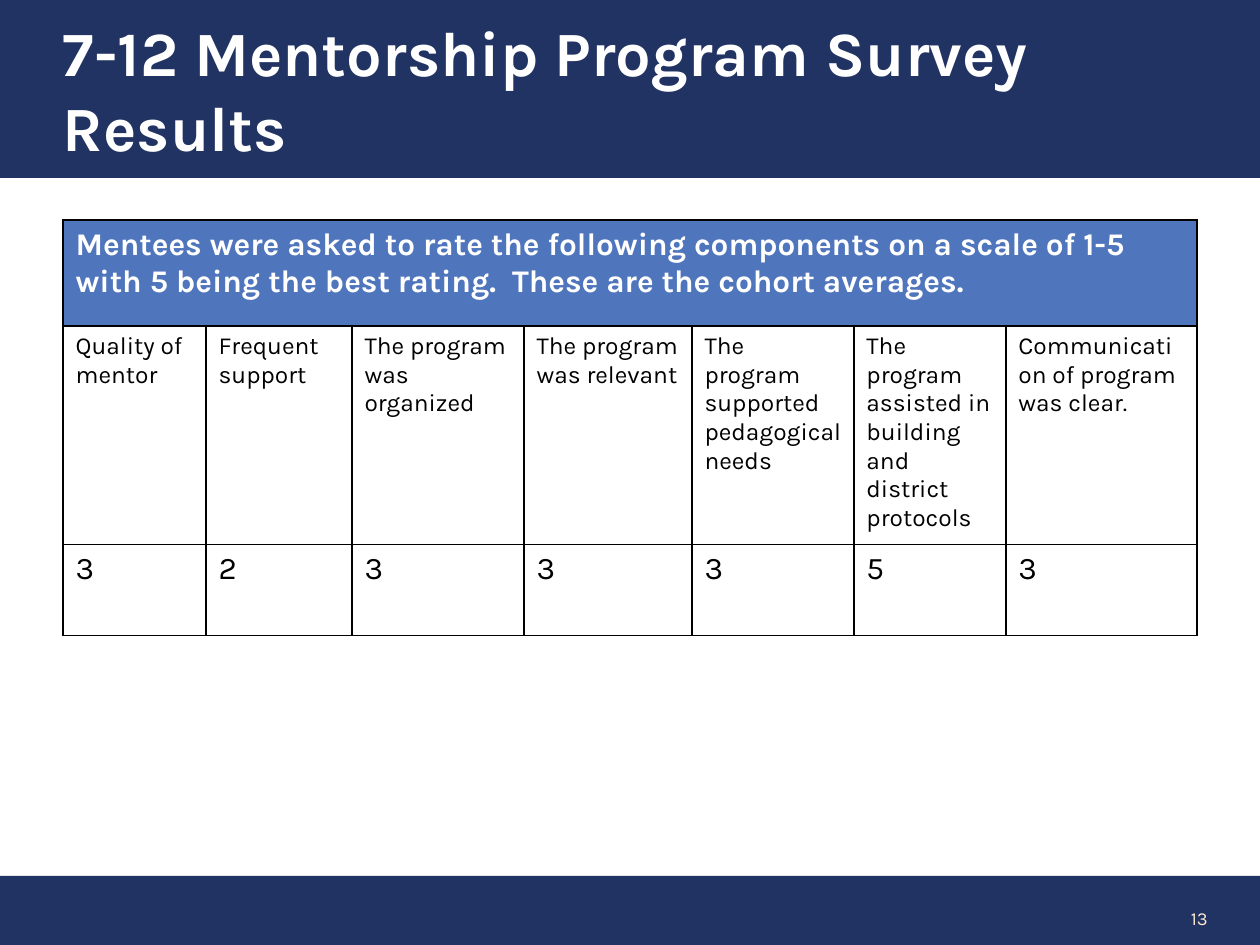
from dataclasses import dataclass

import pptx
import pptx.dml.color
import pptx.enum.shapes
import pptx.enum.text
import pptx.oxml
import pptx.oxml.ns
import pptx.util

EMU_PER_PX = 914400 / 126
ALIGN = pptx.enum.text.PP_ALIGN
ANCHOR = pptx.enum.text.MSO_ANCHOR


@dataclass(frozen=True)
class Theme:
    font: str = "Karla"
    navy: str = "213363"
    header_blue: str = "4F75BC"
    white: str = "FFFFFF"
    black: str = "000000"
    cream: str = "FEEBD0"
    title_size: float = 36
    large_size: float = 18
    label_size: float = 14
    number_size: float = 10.5
    border_width: float = 1


@dataclass(frozen=True)
class Box:
    left: int
    top: int
    width: int
    height: int

    def emu(self) -> list[int]:
        return [px(n) for n in (self.left, self.top, self.width, self.height)]


@dataclass(frozen=True)
class Rating:
    component: str
    average: str
    width: int


THEME = Theme()
SLIDE = Box(0, 0, 1260, 945)
TITLE_BAR = Box(0, 0, 1260, 178)
FOOTER_BAR = Box(0, 876, 1260, 69)
PAGE_NUMBER = Box(1036, 893, 184, 50)
TABLE = Box(63, 220, 1134, 375)
ROW_HEIGHTS = (106, 178, 91)
QUESTION = (
    "Mentees were asked to rate the following components on a scale of 1-5 "
    "with 5 being the best rating.  These are the cohort averages."
)
RATINGS = (
    Rating("Quality of mentor", "3", 143),
    Rating("Frequent support", "2", 146),
    Rating("The program was organized", "3", 172),
    Rating("The program was relevant", "3", 168),
    Rating("The program supported pedagogical needs", "3", 162),
    Rating("The program assisted in building and district protocols", "5", 152),
    Rating("Communication of program was clear.", "3", 191),
)


def px(length: int) -> int:
    return round(length * EMU_PER_PX)


def rgb(value: str) -> pptx.dml.color.RGBColor:
    return pptx.dml.color.RGBColor.from_string(value)


def write(frame, text: str, *, size: float, color: str, bold: bool = False,
          align=ALIGN.LEFT) -> None:
    frame.word_wrap = True
    paragraph = frame.paragraphs[0]
    paragraph.alignment = align
    run = paragraph.add_run()
    run.text = text
    run.font.name = THEME.font
    run.font.size = pptx.util.Pt(size)
    run.font.bold = bold
    run.font.color.rgb = rgb(color)


def add_bar(slide, box: Box):
    bar = slide.shapes.add_shape(
        pptx.enum.shapes.MSO_SHAPE.RECTANGLE, *box.emu())
    bar.shadow.inherit = False
    bar.fill.solid()
    bar.fill.fore_color.rgb = rgb(THEME.navy)
    bar.line.fill.background()
    return bar


def add_borders(cell) -> None:
    """Outline all four sides; the lines must precede the fill in the XML."""
    properties = cell._tc.get_or_add_tcPr()
    for position, side in enumerate("LRTB"):
        line = pptx.oxml.parse_xml(
            f'<a:ln{side} {pptx.oxml.ns.nsdecls("a")} '
            f'w="{pptx.util.Pt(THEME.border_width)}"><a:solidFill>'
            f'<a:srgbClr val="{THEME.black}"/></a:solidFill></a:ln{side}>')
        properties.insert(position, line)


def add_ratings(slide) -> None:
    table = slide.shapes.add_table(
        len(ROW_HEIGHTS), len(RATINGS), *TABLE.emu()).table
    table.horz_banding = False
    for row, height in zip(table.rows, ROW_HEIGHTS):
        row.height = px(height)
    for cell in table.iter_cells():
        cell.fill.solid()
        cell.fill.fore_color.rgb = rgb(THEME.white)
        add_borders(cell)

    header = table.cell(0, 0)
    header.merge(table.cell(0, len(RATINGS) - 1))
    header.fill.fore_color.rgb = rgb(THEME.header_blue)
    write(header.text_frame, QUESTION, size=THEME.large_size,
          color=THEME.white, bold=True)

    for index, rating in enumerate(RATINGS):
        table.columns[index].width = px(rating.width)
        write(table.cell(1, index).text_frame, rating.component,
              size=THEME.label_size, color=THEME.black)
        write(table.cell(2, index).text_frame, rating.average,
              size=THEME.large_size, color=THEME.black)


def main() -> None:
    deck = pptx.Presentation()
    deck.slide_width, deck.slide_height = px(SLIDE.width), px(SLIDE.height)
    slide = deck.slides.add_slide(deck.slide_layouts[6])

    add_bar(slide, FOOTER_BAR)
    page_number = slide.shapes.add_textbox(*PAGE_NUMBER.emu()).text_frame
    page_number.vertical_anchor = ANCHOR.MIDDLE
    write(page_number, "13", size=THEME.number_size, color=THEME.cream,
          align=ALIGN.RIGHT)

    title = add_bar(slide, TITLE_BAR).text_frame
    title.margin_left = px(TABLE.left)
    title.vertical_anchor = ANCHOR.MIDDLE
    write(title, "7-12 Mentorship Program Survey Results",
          size=THEME.title_size, color=THEME.white, bold=True)

    add_ratings(slide)
    deck.save("out.pptx")


if __name__ == "__main__":
    main()
